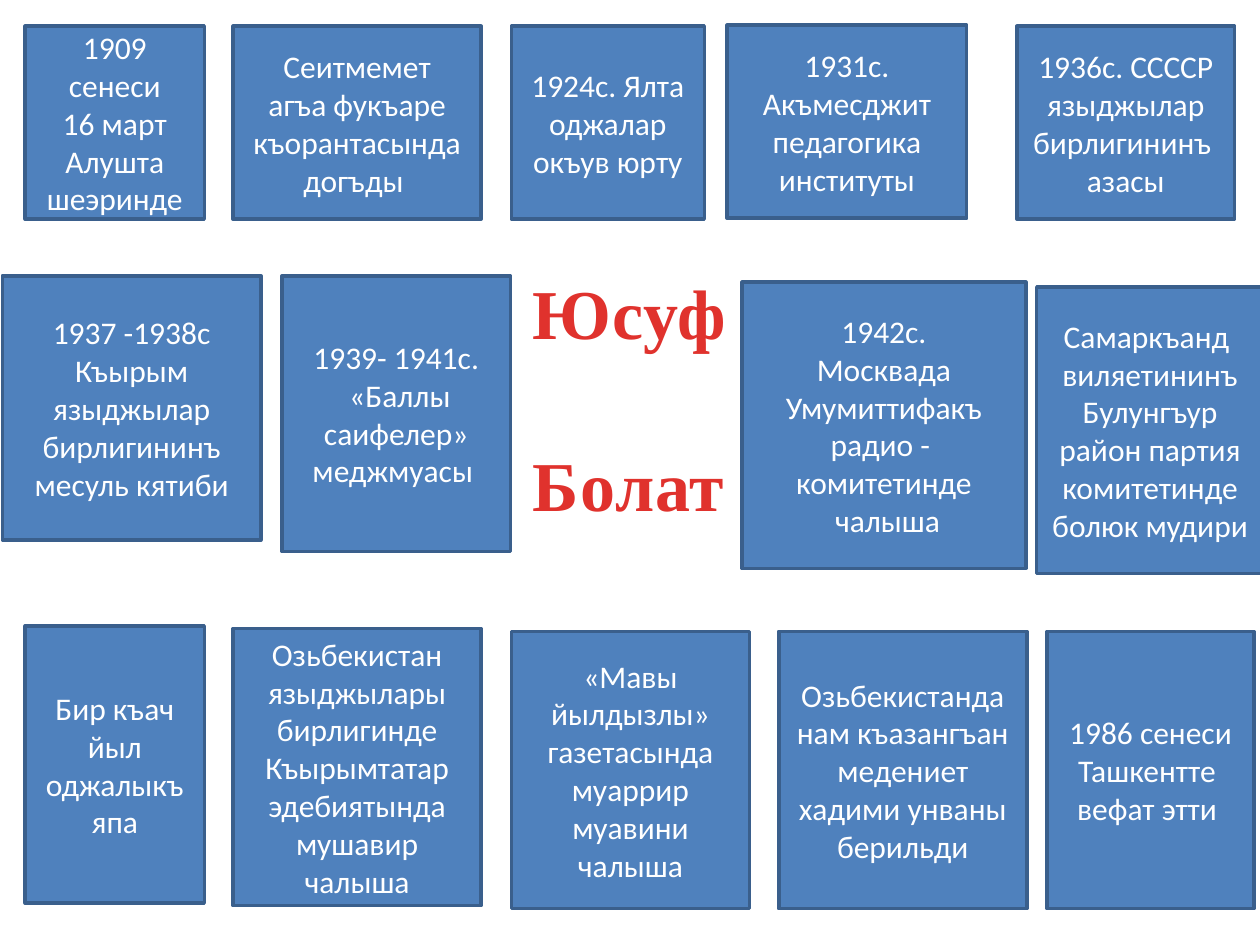
from dataclasses import dataclass

from pptx import Presentation
from pptx.dml.color import RGBColor
from pptx.enum.shapes import MSO_SHAPE
from pptx.enum.text import MSO_ANCHOR, MSO_AUTO_SIZE, PP_ALIGN
from pptx.slide import Slide
from pptx.util import Cm, Pt

RECTANGLE = MSO_SHAPE.RECTANGLE
TOP, MIDDLE = MSO_ANCHOR.TOP, MSO_ANCHOR.MIDDLE
LEFT, CENTER = PP_ALIGN.LEFT, PP_ALIGN.CENTER
NO_AUTO_SIZE = MSO_AUTO_SIZE.NONE

BLUE = RGBColor(0x4F, 0x81, 0xBD)
DARK_BLUE = RGBColor(0x3A, 0x5F, 0x8C)
WHITE = RGBColor(0xFF, 0xFF, 0xFF)
RED = RGBColor(0xE0, 0x32, 0x2D)
DARK_RED = RGBColor(0xA2, 0x20, 0x1C)

TITLE_ONLY_LAYOUT = 5
EARLY_TOP, EARLY_HEIGHT = 0.53, 3.89
LATE_TOP, LATE_HEIGHT = 12.73, 5.59


@dataclass(frozen=True)
class Event:
    left: float
    top: float
    width: float
    height: float
    lines: tuple[str, ...]


EVENTS = (
    Event(0.51, EARLY_TOP, 3.61, EARLY_HEIGHT,
          ("1909 сенеси", "16 март Алушта", "шеэринде")),
    Event(4.7, EARLY_TOP, 5, EARLY_HEIGHT,
          ("Сеитмемет", "агъа фукъаре къорантасында догъды ")),
    Event(10.31, EARLY_TOP, 3.89, EARLY_HEIGHT,
          ("1924с. Ялта оджалар окъув юрту",)),
    Event(14.66, 0.51, 4.83, EARLY_HEIGHT,
          ("1931с.", "Акъмесджит педагогика институты")),
    Event(20.5, EARLY_TOP, 4.39, EARLY_HEIGHT,
          ("1936с. ССССР языджылар бирлигининъ ", "азасы")),
    Event(0.05, 5.56, 5.21, 5.33,
          ("1937 -1938с", "Къырым языджылар бирлигининъ", "месуль кятиби")),
    Event(5.69, 5.56, 4.6, 5.56,
          ("1939- 1941с.", " «Баллы", "саифелер»", "меджмуасы ")),
    Event(14.96, 5.69, 5.72, 5.77,
          ("1942с.", " Москвада ", "Умумиттифакъ радио - ",
           "комитетинде", " чалыша")),
    Event(20.9, 5.79, 4.57, 5.77,
          ("Самаркъанд ", "виляетининъ Булунгъур район партия комитетинде",
           "болюк мудири")),
    Event(4.7, 12.67, 5, LATE_HEIGHT,
          ("Озьбекистан языджылары бирлигинде", "Къырымтатар",
           "эдебиятында мушавир чалыша")),
    Event(0.51, 12.62, 3.61, LATE_HEIGHT,
          ("Бир къач йыл оджалыкъ япа",)),
    Event(10.31, LATE_TOP, 4.8, LATE_HEIGHT,
          ("«Мавы йылдызлы»", "газетасында муаррир муавини чалыша")),
    Event(15.7, LATE_TOP, 5, LATE_HEIGHT,
          ("Озьбекистанда нам къазангъан медениет хадими унваны берильди",)),
    Event(21.11, LATE_TOP, 4.17, LATE_HEIGHT,
          ("1986 сенеси", "Ташкентте ", "вефат этти ")),
)


def fill_title(slide: Slide, words: tuple[str, ...]) -> None:
    title = slide.shapes.title
    title.left, title.top = Cm(10.49), Cm(5.31)
    title.width, title.height = Cm(4.47), Cm(5.38)
    frame = title.text_frame
    frame.auto_size = NO_AUTO_SIZE
    frame.word_wrap = False
    frame.vertical_anchor = TOP
    for index, word in enumerate(words):
        paragraph = frame.add_paragraph() if index else frame.paragraphs[0]
        paragraph.alignment = LEFT
        paragraph.space_before = Pt(50 if index else 0)
        run = paragraph.add_run()
        run.text = word
        font = run.font
        font.name, font.size, font.bold = "Times New Roman", Pt(40), True
        font.fill.gradient()
        font.fill.gradient_angle = 270
        stops = zip(font.fill.gradient_stops, (0.25, 1), (RED, DARK_RED))
        for stop, position, color in stops:
            stop.position = position
            stop.color.rgb = color
        run.font._element.set("spc", "50")


def draw_event(slide: Slide, event: Event) -> None:
    shape = slide.shapes.add_shape(
        RECTANGLE, Cm(event.left), Cm(event.top),
        Cm(event.width), Cm(event.height))
    shape.shadow.inherit = False
    shape.fill.solid()
    shape.fill.fore_color.rgb = BLUE
    shape.line.color.rgb = DARK_BLUE
    shape.line.width = Pt(2)
    frame = shape.text_frame
    frame.word_wrap = True
    frame.vertical_anchor = MIDDLE
    for index, line in enumerate(event.lines):
        paragraph = frame.add_paragraph() if index else frame.paragraphs[0]
        paragraph.alignment = CENTER
        run = paragraph.add_run()
        run.text = line
        run.font.name, run.font.size = "Calibri", Pt(18)
        run.font.color.rgb = WHITE


def main() -> None:
    presentation = Presentation()
    presentation.slide_width, presentation.slide_height = Cm(25.4), Cm(19.05)
    layout = presentation.slide_layouts[TITLE_ONLY_LAYOUT]
    slide = presentation.slides.add_slide(layout)
    fill_title(slide, ("Юсуф", "Болат"))
    for event in EVENTS:
        draw_event(slide, event)
    presentation.save("out.pptx")


if __name__ == "__main__":
    main()
